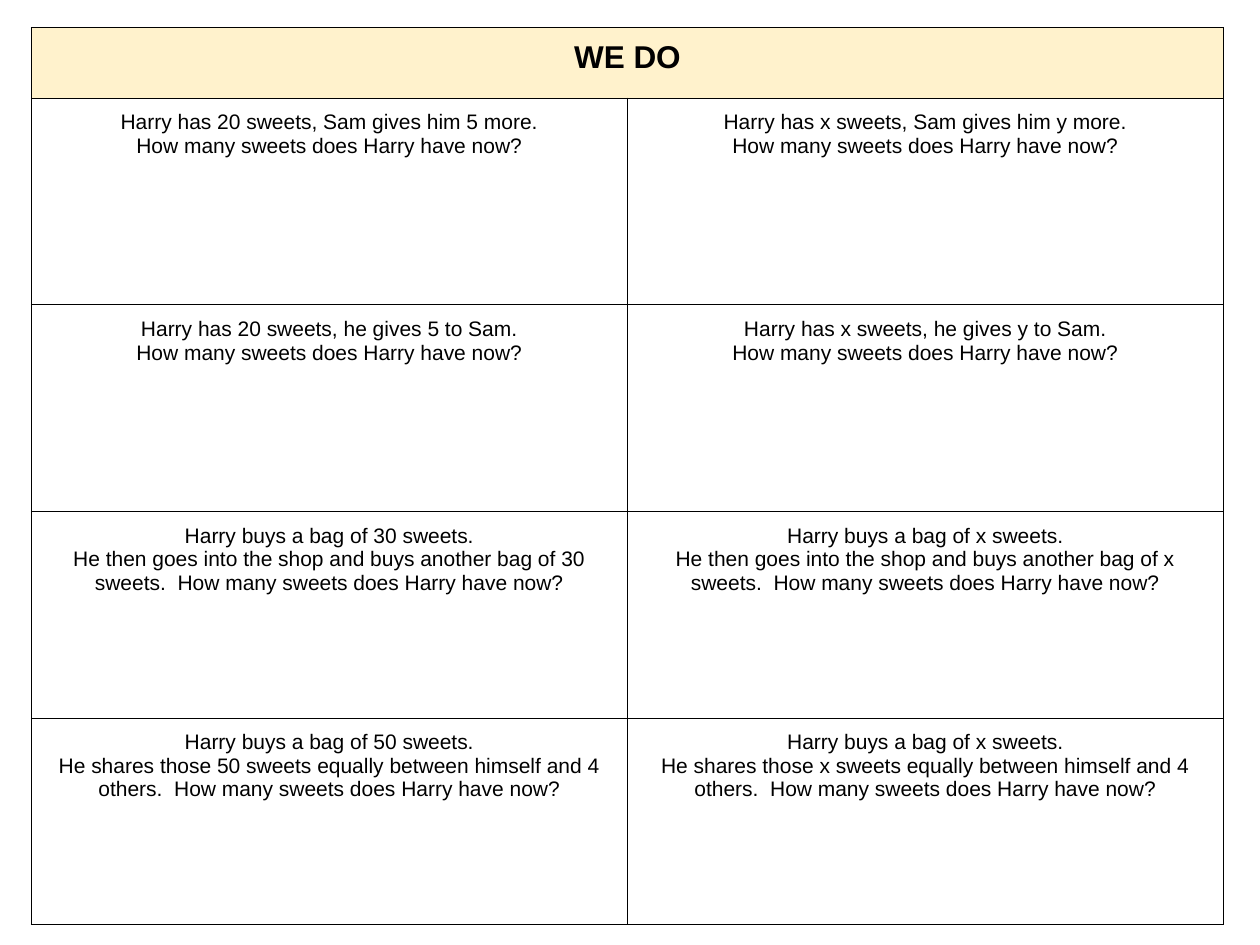
import pptx
import pptx.dml.color
import pptx.enum.text
import pptx.oxml
import pptx.oxml.ns
import pptx.util

Inches = pptx.util.Inches
Pt = pptx.util.Pt
Color = pptx.dml.color.RGBColor.from_string

HEADING = "WE DO"
NOW = "How many sweets does Harry have now?"
# Each question is asked once with numbers and once with letters.
QUESTIONS = [
    (["Harry has {a} sweets, Sam gives him {b} more.", NOW],
     [{"a": "20", "b": "5"}, {"a": "x", "b": "y"}]),
    (["Harry has {a} sweets, he gives {b} to Sam.", NOW],
     [{"a": "20", "b": "5"}, {"a": "x", "b": "y"}]),
    (["Harry buys a bag of {a} sweets.",
      "He then goes into the shop and buys another bag of {a} sweets.  " + NOW],
     [{"a": "30"}, {"a": "x"}]),
    (["Harry buys a bag of {a} sweets.",
      "He shares those {a} sweets equally between himself and 4 others.  " + NOW],
     [{"a": "50"}, {"a": "x"}]),
]

THEME = {
    "heading_fill": "FFF2CC",
    "border": "000000",
    "border_width": Pt(0.75),
    "heading": {"name": "Arial", "size": Pt(18), "bold": True},
    "question": {"name": "Arial", "size": Pt(12), "bold": False},
    "text": "000000",
}
LEFT, TOP, WIDTH = 0.25, 0.22, 9.46
HEADING_HEIGHT, QUESTION_HEIGHT = 0.56, 1.64
MARGINS = dict.fromkeys(
    ("margin_left", "margin_right", "margin_top", "margin_bottom"), Inches(0.1))


def set_attributes(target, values):
    for name, value in values.items():
        setattr(target, name, value)


def add_borders(cell):
    properties = cell._tc.get_or_add_tcPr()
    for side in ("lnL", "lnR", "lnT", "lnB"):
        properties.append(pptx.oxml.parse_xml(
            f'<a:{side} {pptx.oxml.ns.nsdecls("a")} w="{THEME["border_width"]}">'
            f'<a:solidFill><a:srgbClr val="{THEME["border"]}"/></a:solidFill>'
            f'</a:{side}>'))


def write_cell(cell, lines, font):
    set_attributes(cell, MARGINS)
    cell.text = "\n".join(lines)
    for paragraph in cell.text_frame.paragraphs:
        paragraph.alignment = pptx.enum.text.PP_ALIGN.CENTER
        for run in paragraph.runs:
            set_attributes(run.font, font)
            run.font.color.rgb = Color(THEME["text"])


def main():
    deck = pptx.Presentation()
    deck.slide_width, deck.slide_height = Inches(10), Inches(7.5)
    slide = deck.slides.add_slide(deck.slide_layouts[6])

    row_count = len(QUESTIONS) + 1
    height = HEADING_HEIGHT + len(QUESTIONS) * QUESTION_HEIGHT
    worksheet = slide.shapes.add_table(
        row_count, 2, Inches(LEFT), Inches(TOP), Inches(WIDTH), Inches(height)).table
    set_attributes(worksheet, {"first_row": False, "horz_banding": False})
    for index, row in enumerate(worksheet.rows):
        row.height = Inches(QUESTION_HEIGHT if index else HEADING_HEIGHT)

    for cell in worksheet.iter_cells():
        add_borders(cell)
        cell.fill.background()

    heading = worksheet.cell(0, 0)
    heading.merge(worksheet.cell(0, 1))
    heading.fill.solid()
    heading.fill.fore_color.rgb = Color(THEME["heading_fill"])
    write_cell(heading, [HEADING], THEME["heading"])

    for row, (lines, versions) in enumerate(QUESTIONS, start=1):
        for column, amounts in enumerate(versions):
            wording = [line.format(**amounts) for line in lines]
            write_cell(worksheet.cell(row, column), wording, THEME["question"])

    deck.save("out.pptx")


if __name__ == "__main__":
    main()
